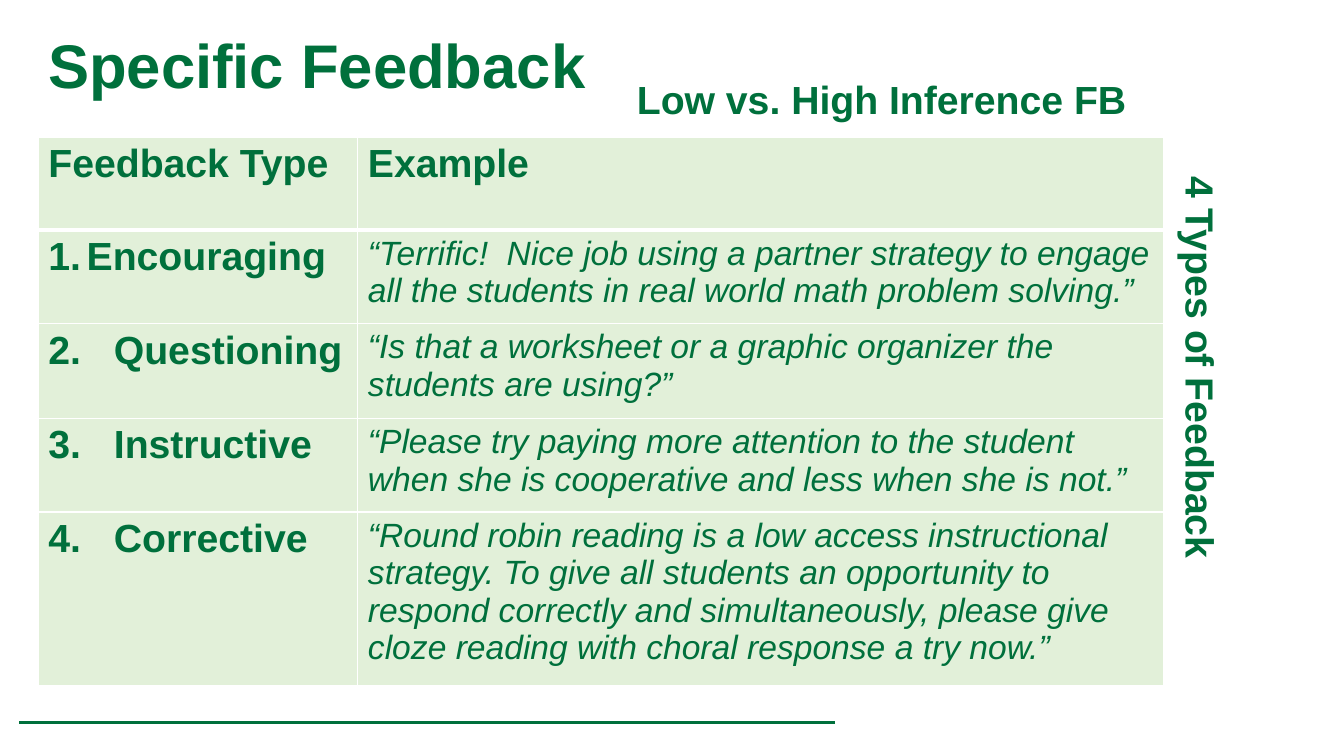
"""Build the Specific Feedback slide with its table of four feedback types."""
from lxml.etree import SubElement
from pptx import Presentation
from pptx.dml.color import RGBColor
from pptx.enum.shapes import MSO_CONNECTOR
from pptx.enum.text import MSO_ANCHOR
from pptx.oxml import parse_xml
from pptx.oxml.ns import nsdecls, qn
from pptx.util import Inches, Pt

COLORS = {"green": "00703C", "pale": "E2F0D9", "white": "FFFFFF"}

prs = Presentation()
prs.slide_width, prs.slide_height = Inches(13.33), Inches(7.5)
s = prs.slides.add_slide(prs.slide_layouts[6])


def at(*shares):
    """Turn percentages of slide width and height, in turn, into lengths."""
    sides = (prs.slide_width, prs.slide_height)
    return [round(share / 100 * sides[i % 2]) for i, share in enumerate(shares)]


def put(tf, text, size=28, bold=True, italic=False, spacing=None, number=None, indent=0):
    """Write one formatted, optionally numbered paragraph."""
    tf.word_wrap = True
    p = tf.paragraphs[0]
    if spacing:
        p.line_spacing = spacing
    if number:
        pPr = p._p.get_or_add_pPr()
        pPr.set("marL", str(Inches(indent)))
        pPr.set("indent", str(-Inches(indent)))
        SubElement(pPr, qn("a:buFont"), typeface="+mj-lt")
        SubElement(pPr, qn("a:buAutoNum"), type="arabicPeriod", startAt=str(number))
    r = p.add_run()
    r.text = text
    r.font.name, r.font.size = "Arial", Pt(size)
    r.font.bold, r.font.italic = bold, italic
    r.font.color.rgb = RGBColor.from_string(COLORS["green"])


title = s.shapes.add_textbox(*at(2.85, 2, 86.25, 14.27))
title.text_frame.vertical_anchor = MSO_ANCHOR.MIDDLE
put(title.text_frame, "Specific Feedback", size=44, spacing=0.9)

side = s.shapes.add_textbox(*at(72.9, 47.07, 32.7, 8))
side.rotation = 90
put(side.text_frame, "4 Types of Feedback")

subtitle = s.shapes.add_textbox(*at(46.65, 10, 42.53, 11.2))
put(subtitle.text_frame, "Low vs. High Inference FB", spacing=0.9)

rule = s.shapes.add_connector(MSO_CONNECTOR.STRAIGHT, *at(1.43, 95.6, 62.1, 95.6))
rule.line.color.rgb = RGBColor.from_string(COLORS["green"])
rule.line.width = Pt(2.5)
SubElement(rule._element.spPr, qn("a:effectLst"))

rows = [
    ("Feedback Type", "Example"),
    ("Encouraging", "“Terrific!  Nice job using a partner strategy to engage all the "
     "students in real world math problem solving.”"),
    ("Questioning", "“Is that a worksheet or a graphic organizer the students are using?”"),
    ("Instructive", "“Please try paying more attention to the student when she is "
     "cooperative and less when she is not.”"),
    ("Corrective", "“Round robin reading is a low access instructional strategy. To give "
     "all students an opportunity to respond correctly and simultaneously, please give "
     "cloze reading with choral response a try now.”"),
]
tbl = s.shapes.add_table(len(rows), 2, *at(2.85, 18.13, 83.7, 72.55)).table
for col, share in zip(tbl.columns, (23.78, 59.92)):
    col.width = at(share)[0]
for row, share in zip(tbl.rows, (12.27, 12.4, 12.53, 12.4, 22.95)):
    row.height = at(0, share)[1]

for i, texts in enumerate(rows):
    for j, text in enumerate(texts):
        cell = tbl.cell(i, j)
        cell.fill.solid()
        cell.fill.fore_color.rgb = RGBColor.from_string(COLORS["pale"])
        widths = {"L": 1, "R": 1, "T": 3 if i == 1 else 1, "B": 3 if i == 0 else 1}
        for k, (edge, width) in enumerate(widths.items()):
            cell._tc.get_or_add_tcPr().insert(k, parse_xml(
                f'<a:ln{edge} {nsdecls("a")} w="{Pt(width)}"><a:solidFill>'
                f'<a:srgbClr val="{COLORS["white"]}"/></a:solidFill></a:ln{edge}>'))
        if i == 0:
            put(cell.text_frame, text)
        elif j == 0:
            put(cell.text_frame, text, number=i, indent=0.38 if i == 1 else 0.65)
        else:
            put(cell.text_frame, text, size=24, bold=False, italic=True)

prs.save("out.pptx")
